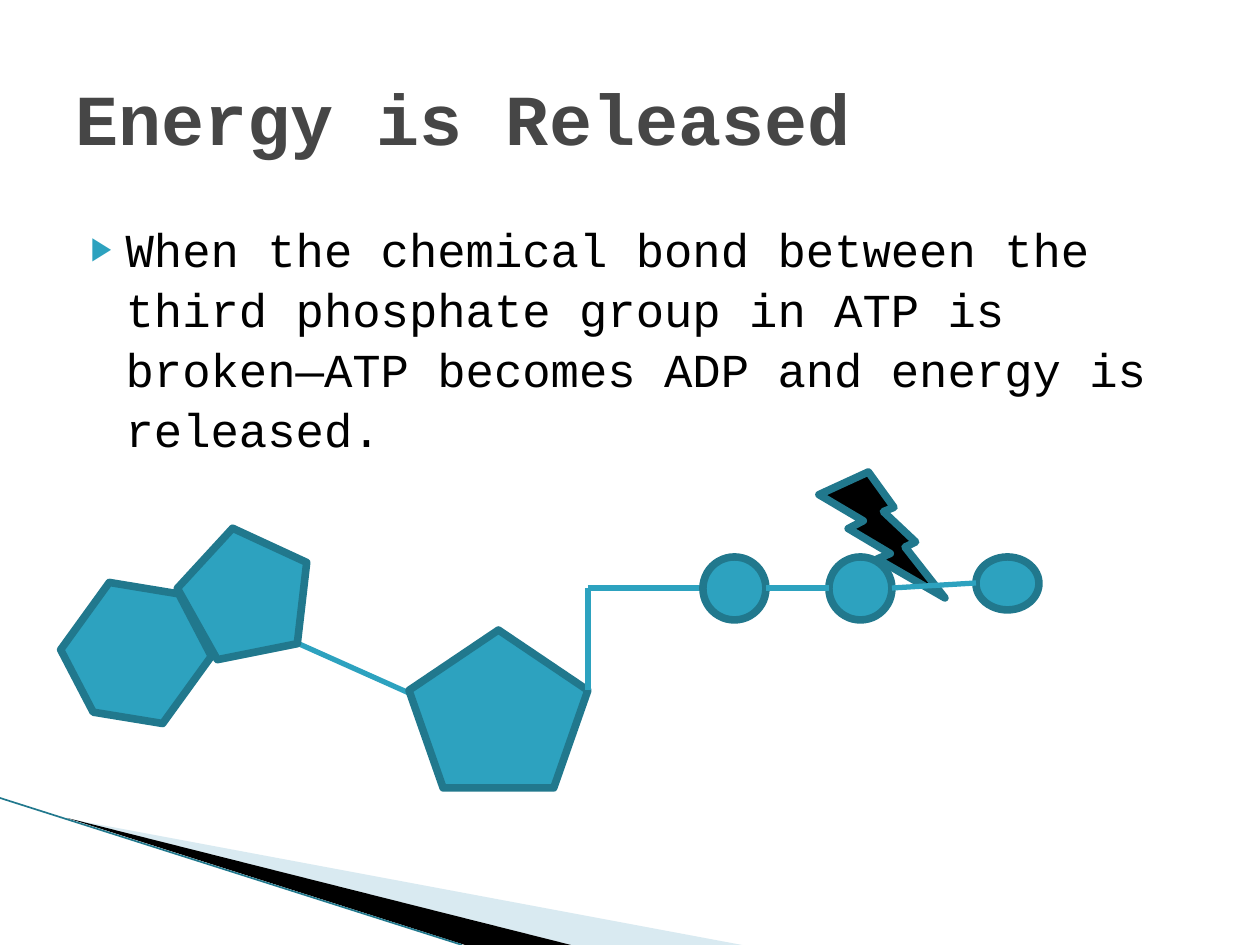
from dataclasses import dataclass

from lxml import etree
from pptx import Presentation, util as u
from pptx.dml.color import RGBColor
from pptx.enum import shapes, text
from pptx.oxml import parse_xml
from pptx.oxml.ns import nsdecls, qn

PX = 914400 // 126
KIND = shapes.MSO_SHAPE


@dataclass(frozen=True)
class Theme:
    """Colours, font and sizes of the slide."""
    accent: str = "2DA2BF"
    edge: str = "21788D"
    pale: str = "A0CBDC"
    dark: str = "000000"
    heading: str = "464646"
    font: str = "Courier New"
    title_size: int = 41
    body_size: int = 27
    edge_width: float = 4.33
    bond_width: float = 3
    rule_width: float = 0.95


T = Theme()


def px(*values):
    """Turn pixel lengths into EMU."""
    return [u.Emu(v * PX) for v in values]


def apply(obj, **values):
    """Set attributes from a dict of format values."""
    for name, value in values.items():
        setattr(obj, name, value)


def paint(fill, color):
    """Give a fill one solid colour."""
    fill.solid()
    fill.fore_color.rgb = RGBColor.from_string(color)


def write(sp, box, words, anchor, size, color, bold, top=6):
    """Place and fill a text placeholder and return its paragraph."""
    apply(sp, **dict(zip(("left", "top", "width", "height"), px(*box))))
    tf = sp.text_frame
    apply(tf, word_wrap=True, auto_size=text.MSO_AUTO_SIZE.NONE,
          vertical_anchor=anchor, margin_top=u.Emu(top * PX))
    p = tf.paragraphs[0]
    apply(p, alignment=text.PP_ALIGN.LEFT, space_before=u.Pt(0))
    r = p.add_run()
    r.text = words
    apply(r.font, name=T.font, size=u.Pt(size), bold=bold)
    r.font.color.rgb = RGBColor.from_string(color)
    return p


def add_bullet(p, indent, hang):
    """Give a paragraph a coloured triangle bullet."""
    pPr = p._p.get_or_add_pPr()
    pPr.set("marL", str(indent * PX))
    pPr.set("indent", str(-hang * PX))
    for xml in (f'<a:buClr {nsdecls("a")}><a:srgbClr val="{T.accent}"/></a:buClr>',
                f'<a:buSzPct {nsdecls("a")} val="68000"/>',
                f'<a:buChar {nsdecls("a")} char="▶"/>'):
        pPr.append(parse_xml(xml))


def add_wedge(s, points, color, alpha=None):
    """Draw a borderless polygon."""
    start, *rest = points
    builder = s.shapes.build_freeform(*start, scale=PX)
    builder.add_line_segments(rest, close=True)
    sp = builder.convert_to_shape()
    sp.shadow.inherit = False
    paint(sp.fill, color)
    sp.line.fill.background()
    if alpha:
        clr = sp.fill._xPr.find(qn("a:solidFill"))[0]
        etree.SubElement(clr, qn("a:alpha")).set("val", str(alpha * 1000))


def add_part(s, kind, box, rotation=0, color=T.accent):
    """Draw one outlined part of the molecule."""
    sp = s.shapes.add_shape(kind, *px(*box))
    sp.rotation = rotation
    sp.shadow.inherit = False
    paint(sp.fill, color)
    paint(sp.line.fill, T.edge)
    sp.line.width = u.Pt(T.edge_width)


def add_line(s, start, end, color=T.accent, width=T.bond_width):
    """Draw a straight line."""
    line = s.shapes.add_connector(shapes.MSO_CONNECTOR.STRAIGHT, *px(*start, *end))
    paint(line.line.fill, color)
    line.line.width = u.Pt(width)
    etree.SubElement(line._element.spPr, qn("a:effectLst"))


def add_corner(s):
    """Draw the wedges in the bottom left corner."""
    add_wedge(s, [(69, 819), (742, 945), (571, 945)], T.pale, 40)
    add_wedge(s, [(67, 818), (571, 945), (465, 945)], T.dark)
    add_line(s, (0, 798), (462, 945), T.edge, T.rule_width)


def add_molecule(s):
    """Draw the molecule with its phosphate chain and the energy bolt."""
    axis, first, size, step = 588, 703, 63, 126
    add_part(s, KIND.LIGHTNING_BOLT, (819, 472, 126, 126), color=T.dark)
    add_part(s, KIND.HEXAGON, (63, 590, 146, 126), 305.9)
    add_line(s, (297, 643), (409, 693))
    add_part(s, KIND.REGULAR_PENTAGON, (409, 630, 179, 158))
    add_line(s, (588, 690), (588, axis))
    add_line(s, (588, axis), (first, axis))
    for i in range(2):
        add_part(s, KIND.OVAL, (first + i * step, axis - size // 2, size, size))
    add_line(s, (first + size, axis), (first + step, axis))
    add_part(s, KIND.REGULAR_PENTAGON, (179, 527, 132, 126), 348.7)
    add_part(s, KIND.OVAL, (976, 557, size, 53))
    add_line(s, (first + step + size, axis), (976, 583))


def main():
    """Build and save the slide."""
    prs = Presentation()
    apply(prs, slide_width=u.Inches(10), slide_height=u.Inches(7.5))
    s = prs.slides.add_slide(prs.slide_layouts[1])
    add_corner(s)
    title, body = s.placeholders
    p = write(body, (63, 204, 1134, 624),
              "When the chemical bond between the third phosphate group in ATP is "
              "broken—ATP becomes ADP and energy is released.",
              text.MSO_ANCHOR.TOP, T.body_size, T.dark, False, top=13)
    p.line_spacing = 1.06
    add_bullet(p, 50, 35)
    write(title, (63, 38, 1134, 158), "Energy is Released",
          text.MSO_ANCHOR.MIDDLE, T.title_size, T.heading, True)
    add_molecule(s)
    prs.save("out.pptx")


if __name__ == "__main__":
    main()
